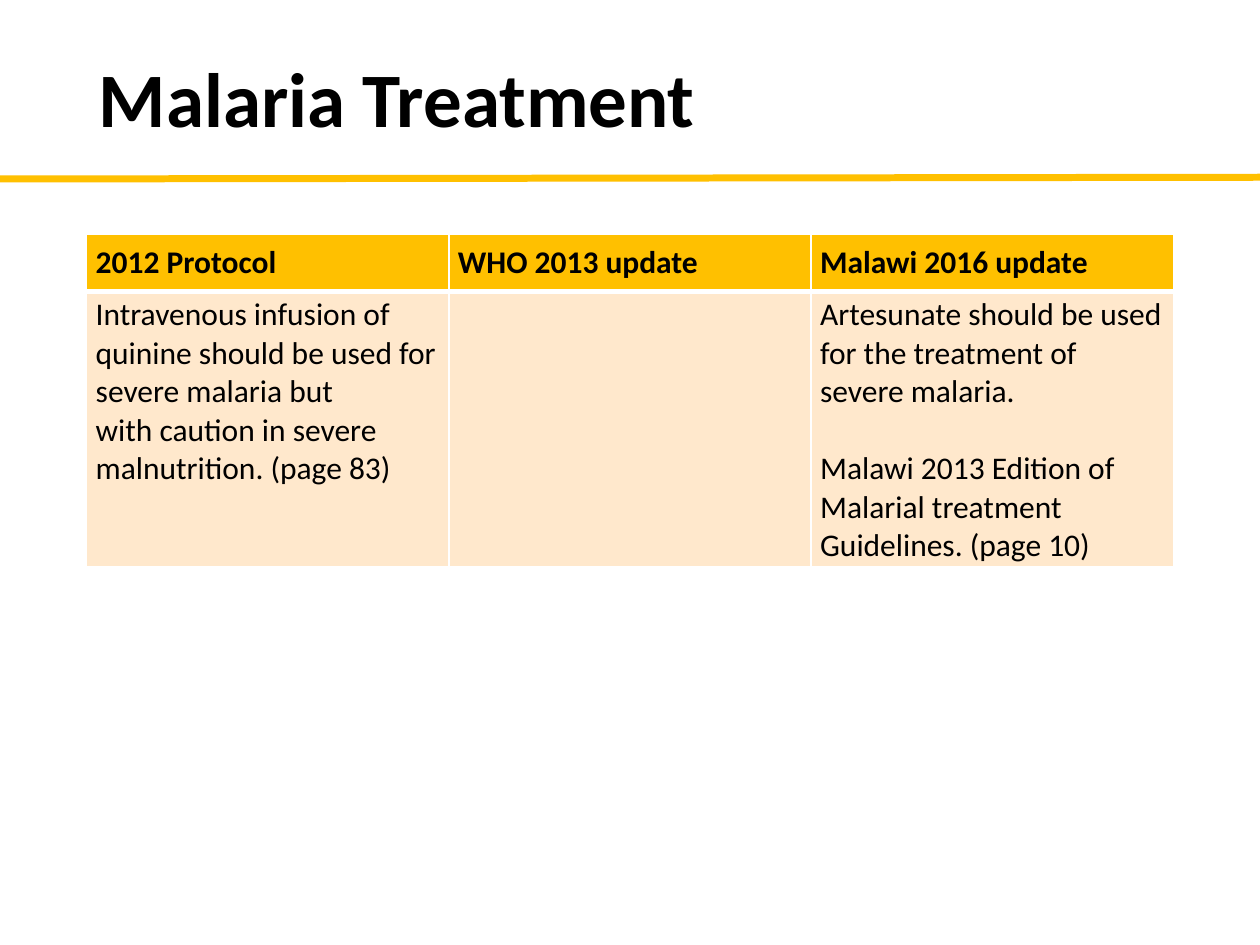
import pptx
import pptx.dml.color
import pptx.enum.shapes
import pptx.enum.text
import pptx.oxml
import pptx.oxml.ns
import pptx.util
from pptx.util import Pt

BLACK = pptx.dml.color.RGBColor(0x00, 0x00, 0x00)
AMBER = pptx.dml.color.RGBColor(0xFF, 0xC0, 0x00)
CREAM = pptx.dml.color.RGBColor(0xFF, 0xE8, 0xCC)
WHITE = pptx.dml.color.RGBColor(0xFF, 0xFF, 0xFF)
MIDDLE = pptx.enum.text.MSO_ANCHOR.MIDDLE
TOP = pptx.enum.text.MSO_ANCHOR.TOP

LEFT, WIDTH = 49.5, 621
COLUMNS = [
    ("2012 Protocol", [
        "Intravenous infusion of quinine should be used for severe malaria but",
        "with caution in severe malnutrition. (page 83)"]),
    ("WHO 2013 update", [""]),
    ("Malawi 2016 update", [
        "Artesunate should be used for the treatment of severe malaria.",
        "Malawi 2013 Edition of Malarial treatment Guidelines. (page 10)"]),
]


def style_paragraph(paragraph, size, bold):
    paragraph.font.name = "Calibri"
    paragraph.font.size = Pt(size)
    paragraph.font.bold = bold
    paragraph.font.color.rgb = BLACK


def fill_cell(cell, lines, color, anchor, bold, top_width, bottom_width):
    """Write the lines and set the cell's fill and white borders."""
    cell.text = "\n".join(lines)
    cell.vertical_anchor = anchor
    for paragraph in cell.text_frame.paragraphs:
        style_paragraph(paragraph, 18, bold)
    properties = cell._tc.get_or_add_tcPr()
    for side, width in (("L", 1), ("R", 1), ("T", top_width), ("B", bottom_width)):
        properties.append(pptx.oxml.parse_xml(
            f'<a:ln{side} {pptx.oxml.ns.nsdecls("a")} w="{Pt(width)}">'
            f'<a:solidFill><a:srgbClr val="{WHITE}"/></a:solidFill></a:ln{side}>'))
    cell.fill.solid()
    cell.fill.fore_color.rgb = color


presentation = pptx.Presentation()
presentation.slide_width = Pt(720)
presentation.slide_height = Pt(540)
slide = presentation.slides.add_slide(presentation.slide_layouts[6])

rule = slide.shapes.add_connector(
    pptx.enum.shapes.MSO_CONNECTOR.STRAIGHT, Pt(0), Pt(102.3), Pt(720), Pt(101.3))
rule.line.color.rgb = AMBER
rule.line.width = Pt(4)
rule._element.spPr.append(pptx.oxml.parse_xml(
    f'<a:effectLst {pptx.oxml.ns.nsdecls("a")}/>'))

title = slide.shapes.add_textbox(Pt(LEFT), Pt(28.8), Pt(WIDTH), Pt(59.8))
title.text_frame.word_wrap = True
title.text_frame.vertical_anchor = MIDDLE
title.text_frame.text = "Malaria Treatment"
title_paragraph = title.text_frame.paragraphs[0]
title_paragraph.line_spacing = 0.9
style_paragraph(title_paragraph, 44, True)

table = slide.shapes.add_table(
    2, len(COLUMNS), Pt(LEFT), Pt(134), Pt(WIDTH), Pt(190)).table
table.horz_banding = False
table.rows[0].height = Pt(32.5)
table.rows[1].height = Pt(157.5)
for index, (heading, lines) in enumerate(COLUMNS):
    table.columns[index].width = Pt(WIDTH / len(COLUMNS))
    header, body = table.cell(0, index), table.cell(1, index)
    fill_cell(header, [heading], AMBER, MIDDLE, True, 1, 3)
    fill_cell(body, lines, CREAM, TOP, False, 3, 1)
    for cell in (header, body):
        cell.margin_left = cell.margin_right = Pt(5.2)
        cell.margin_top = cell.margin_bottom = Pt(2.6)

# One line of space sets the guideline reference apart.
table.cell(1, 2).text_frame.paragraphs[1].space_before = Pt(22)

presentation.save("out.pptx")
